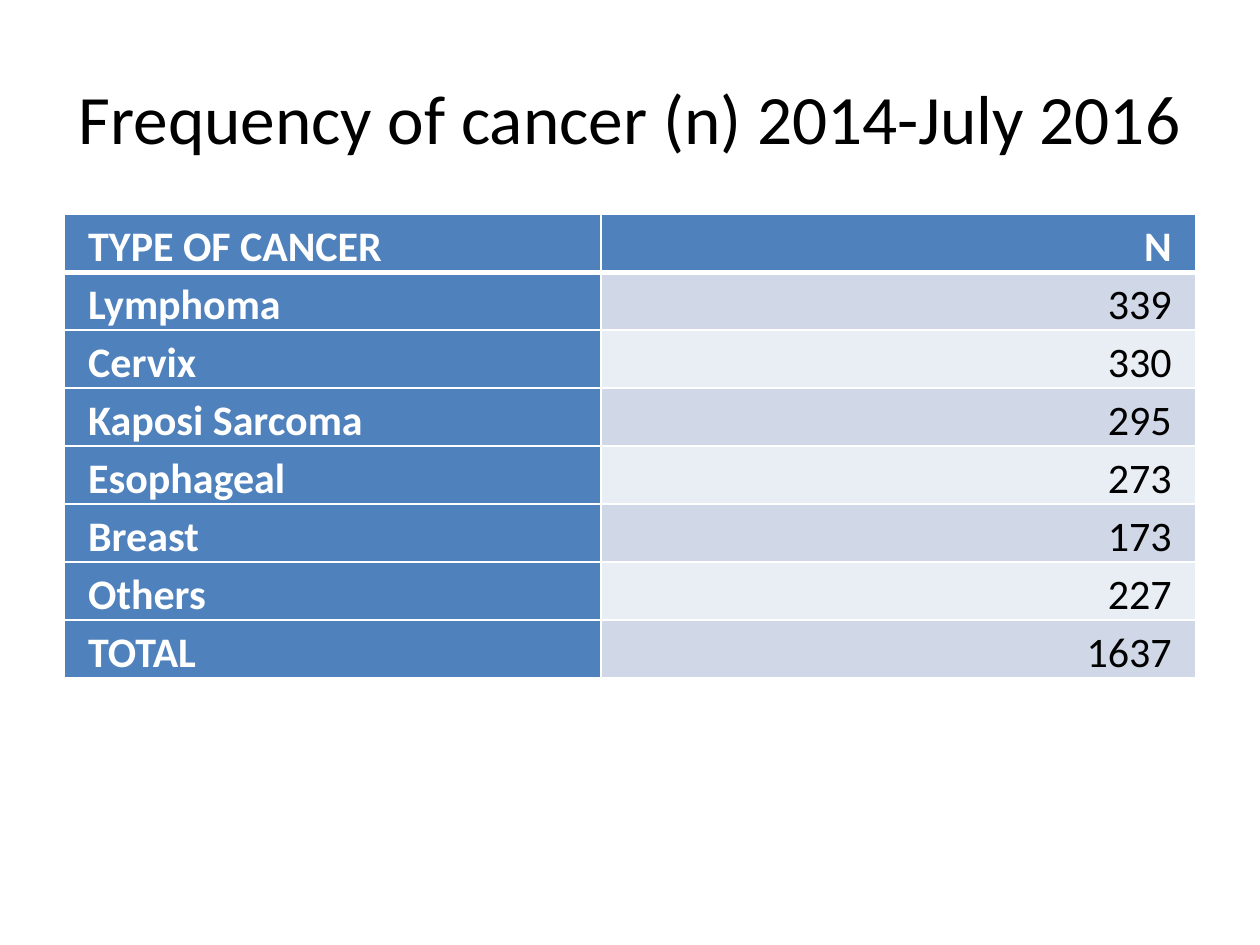
from dataclasses import dataclass

from lxml.etree import SubElement
from pptx import Presentation
from pptx.dml.color import RGBColor as Rgb
from pptx.enum.text import MSO_ANCHOR as Anchor, PP_ALIGN as Align
from pptx.oxml.ns import qn
from pptx.util import Inches, Pt


@dataclass(frozen=True)
class Theme:
    font: str = "Calibri"
    title_size: float = 39.6
    table_size: float = 24
    ink: str = "000000"
    paper: str = "FFFFFF"
    accent: str = "4F81BD"
    bands: tuple[str, str] = ("D0D8E8", "E9EDF4")
    rule: float = 1
    header_rule: float = 3


@dataclass(frozen=True)
class Record:
    label: str
    count: str


THEME = Theme()
HEADER = Record("TYPE OF CANCER", "N")
RECORDS = [
    Record("Lymphoma", "339"),
    Record("Cervix", "330"),
    Record("Kaposi Sarcoma", "295"),
    Record("Esophageal", "273"),
    Record("Breast", "173"),
    Record("Others", "227"),
    Record("TOTAL", "1637"),
]
COLUMN_WIDTHS = (4.26, 4.72)
ROW_HEIGHT = 0.46


def write(frame, text: str, *, size: float, color: str, bold: bool = False,
          align=Align.LEFT, spacing: float = 1.0) -> None:
    para = frame.paragraphs[0]
    para.alignment = align
    para.line_spacing = spacing
    span = para.add_run()
    span.text = text
    span.font.name = THEME.font
    span.font.size = Pt(size)
    span.font.bold = bold
    span.font.color.rgb = Rgb.from_string(color)


def draw_borders(cell, bottom: float) -> None:
    """Rule all four sides; call before the fill, which must follow the lines."""
    properties = cell._tc.get_or_add_tcPr()
    widths = {"lnL": THEME.rule, "lnR": THEME.rule, "lnT": THEME.rule, "lnB": bottom}
    for side, width in widths.items():
        line = SubElement(properties, qn(f"a:{side}"), w=str(Pt(width)))
        fill = SubElement(line, qn("a:solidFill"))
        SubElement(fill, qn("a:srgbClr"), val=THEME.paper)


def draw_cell(cell, text: str, *, fill: str, color: str, bold: bool, align,
              anchor=Anchor.BOTTOM, bottom: float = THEME.rule) -> None:
    draw_borders(cell, bottom)
    cell.fill.solid()
    cell.fill.fore_color.rgb = Rgb.from_string(fill)
    cell.margin_left = cell.margin_right = Inches(0.19)
    cell.margin_top = cell.margin_bottom = 0
    cell.vertical_anchor = anchor
    write(cell.text_frame, text, size=THEME.table_size, color=color, bold=bold,
          align=align, spacing=1.15)


def draw_title(page, text: str) -> None:
    box = page.shapes.add_textbox(Inches(0.5), Inches(0.3), Inches(9), Inches(1.25))
    box.text_frame.word_wrap = True
    box.text_frame.vertical_anchor = Anchor.MIDDLE
    write(box.text_frame, text, size=THEME.title_size, color=THEME.ink,
          align=Align.CENTER)


def draw_table(page, header: Record, records: list[Record]) -> None:
    count = len(records) + 1
    table = page.shapes.add_table(
        count, len(COLUMN_WIDTHS), Inches(0.51), Inches(1.7),
        Inches(sum(COLUMN_WIDTHS)), Inches(ROW_HEIGHT * count)).table
    for column, width in zip(table.columns, COLUMN_WIDTHS):
        column.width = Inches(width)

    # Header row, with a heavier rule beneath
    strong = {"fill": THEME.accent, "color": THEME.paper, "bold": True}
    draw_cell(table.cell(0, 0), header.label, **strong, align=Align.LEFT,
              anchor=Anchor.TOP, bottom=THEME.header_rule)
    draw_cell(table.cell(0, 1), header.count, **strong, align=Align.RIGHT,
              bottom=THEME.header_rule)

    # Body rows: accent labels and banded counts
    for row, record in enumerate(records, start=1):
        draw_cell(table.cell(row, 0), record.label, **strong, align=Align.LEFT)
        draw_cell(table.cell(row, 1), record.count, fill=THEME.bands[(row - 1) % 2],
                  color=THEME.ink, bold=False, align=Align.RIGHT)


def main() -> None:
    deck = Presentation()
    deck.slide_width, deck.slide_height = Inches(10), Inches(7.5)
    page = deck.slides.add_slide(deck.slide_layouts[6])
    draw_title(page, "Frequency of cancer (n) 2014-July 2016")
    draw_table(page, HEADER, RECORDS)
    deck.save("out.pptx")


if __name__ == "__main__":
    main()
